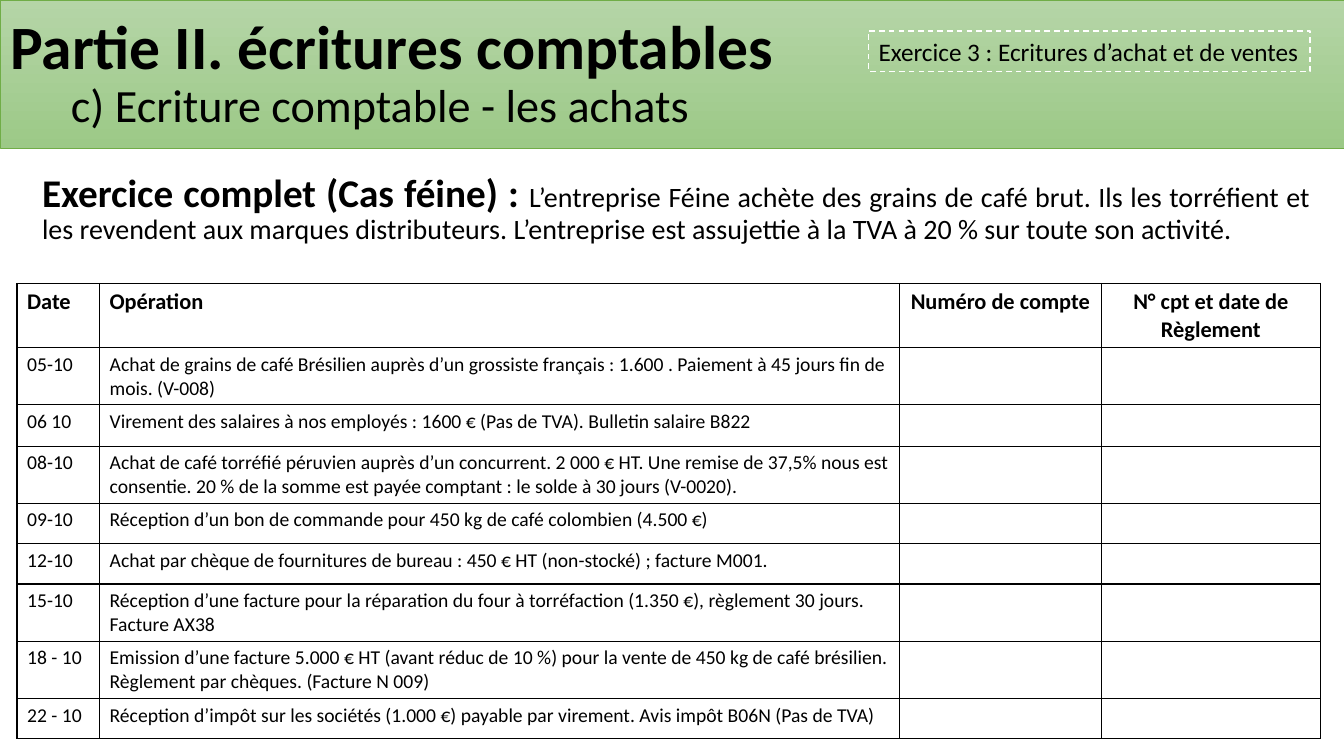
from lxml.etree import SubElement
from pptx import Presentation
from pptx.dml.color import RGBColor
from pptx.enum.dml import MSO_LINE
from pptx.enum.shapes import MSO_SHAPE
from pptx.enum.text import MSO_ANCHOR, MSO_AUTO_SIZE, PP_ALIGN
from pptx.oxml.ns import qn
from pptx.util import Cm, Pt

COLOURS = {
    "text": "000000",
    "border": "000000",
    "dashes": "FFFFFF",
    "banner_top": "B5D5A7",
    "banner_bottom": "9CC987",
    "banner_line": "70AD47",
}
FONT = "Calibri"

HEADING = "Partie II. écritures comptables"
SUBHEADING = "\t c) Ecriture comptable - les achats"
EXERCISE = "Exercice 3 : Ecritures d’achat et de ventes"
CASE_LABEL = "Exercice complet (Cas féine) : "
CASE_TEXT = (
    "L’entreprise Féine achète des grains de café brut. Ils les torréfient et "
    "les revendent aux marques distributeurs. L’entreprise est assujettie à la "
    "TVA à 20 % sur toute son activité."
)

COLUMNS = [
    ("Date", 2.08, PP_ALIGN.LEFT),
    ("Opération", 20.16, PP_ALIGN.LEFT),
    ("Numéro de compte", 5.08, PP_ALIGN.CENTER),
    ("N° cpt et date de Règlement", 5.53, PP_ALIGN.CENTER),
]
HEADER_HEIGHT, ONE_LINE, ONE_LINE_TALL, TWO_LINES = 1.62, 0.85, 1.04, 1.44
OPERATIONS = [
    ("05-10", "Achat de grains de café Brésilien auprès d’un grossiste français : 1.600 . "
     "Paiement à 45 jours fin de mois. (V-008)", TWO_LINES),
    ("06 10", "Virement des salaires à nos employés : 1600 € (Pas de TVA). "
     "Bulletin salaire B822", ONE_LINE_TALL),
    ("08-10", "Achat de café torréfié péruvien auprès d’un concurrent. 2 000 € HT. "
     "Une remise de 37,5% nous est consentie. 20 % de la somme est payée comptant : "
     "le solde à 30 jours (V-0020).", TWO_LINES),
    ("09-10", "Réception d’un bon de commande pour 450 kg de café colombien (4.500 €)", ONE_LINE),
    ("12-10", "Achat par chèque de fournitures de bureau : 450 € HT (non-stocké) ; "
     "facture M001.", ONE_LINE),
    ("15-10", "Réception d’une facture pour la réparation du four à torréfaction (1.350 €), "
     "règlement 30 jours. Facture AX38", TWO_LINES),
    ("18 - 10", "Emission d’une facture 5.000 € HT (avant réduc de 10 %) pour la vente de "
     "450 kg de café brésilien. Règlement par chèques. (Facture N 009)", TWO_LINES),
    ("22 - 10", "Réception d’impôt sur les sociétés (1.000 €) payable par virement. "
     "Avis impôt B06N (Pas de TVA)", ONE_LINE),
]


def colour(key):
    return RGBColor.from_string(COLOURS[key])


def write(paragraph, text, size, bold=False, align=PP_ALIGN.LEFT, spacing=None):
    paragraph.alignment = align
    paragraph.line_spacing = spacing
    run = paragraph.add_run()
    run.text = text
    run.font.name = FONT
    run.font.size = Pt(size)
    run.font.bold = bold
    run.font.color.rgb = colour("text")


def add_borders(cell):
    properties = cell._tc.get_or_add_tcPr()
    for position, side in enumerate(("lnL", "lnR", "lnT", "lnB")):
        line = SubElement(properties, qn(f"a:{side}"), w=str(Pt(1)))
        fill = SubElement(line, qn("a:solidFill"))
        SubElement(fill, qn("a:srgbClr"), val=COLOURS["border"])
        properties.insert(position, line)


def add_banner(slide):
    banner = slide.shapes.title
    banner.left, banner.top, banner.width, banner.height = Cm(0), Cm(0), Cm(33.87), Cm(3.73)
    banner.fill.gradient()
    banner.fill.gradient_angle = 270
    for stop, key in zip(banner.fill.gradient_stops, ("banner_top", "banner_bottom")):
        stop.color.rgb = colour(key)
    banner.line.color.rgb = colour("banner_line")
    banner.line.width = Pt(0.5)
    frame = banner.text_frame
    frame.auto_size = MSO_AUTO_SIZE.NONE
    frame.vertical_anchor = MSO_ANCHOR.MIDDLE
    heading = frame.paragraphs[0]
    write(heading, HEADING, 44, bold=True, spacing=0.9)
    heading.add_line_break()
    write(heading, SUBHEADING, 33, spacing=0.9)


def add_exercise(slide):
    exercise = slide.shapes.add_shape(MSO_SHAPE.RECTANGLE, Cm(21.89), Cm(0.78), Cm(11.13), Cm(1.03))
    exercise.shadow.inherit = False
    exercise.fill.background()
    exercise.line.color.rgb = colour("dashes")
    exercise.line.width = Pt(1)
    exercise.line.dash_style = MSO_LINE.DASH
    exercise.text_frame.word_wrap = False
    exercise.text_frame.auto_size = MSO_AUTO_SIZE.SHAPE_TO_FIT_TEXT
    write(exercise.text_frame.paragraphs[0], EXERCISE, 18)


def add_case(slide):
    case = slide.shapes.add_textbox(Cm(0.81), Cm(4.24), Cm(32.46), Cm(13.94))
    case.text_frame.word_wrap = True
    paragraph = case.text_frame.paragraphs[0]
    write(paragraph, CASE_LABEL, 28, bold=True, align=PP_ALIGN.JUSTIFY, spacing=0.9)
    write(paragraph, CASE_TEXT, 20, align=PP_ALIGN.JUSTIFY, spacing=0.9)


def add_journal(slide):
    heights = [HEADER_HEIGHT] + [height for *_, height in OPERATIONS]
    widths = [width for _, width, _ in COLUMNS]
    journal = slide.shapes.add_table(
        len(heights), len(widths), Cm(0.43), Cm(7.14), Cm(sum(widths)), Cm(sum(heights))
    ).table
    journal.first_row = journal.horz_banding = False
    for row, height in zip(journal.rows, heights):
        row.height = Cm(height)
    for column, width in zip(journal.columns, widths):
        column.width = Cm(width)
    for cell in journal.iter_cells():
        cell.fill.background()
        add_borders(cell)
    for index, (label, _, align) in enumerate(COLUMNS):
        write(journal.cell(0, index).text_frame.paragraphs[0], label, 16, bold=True, align=align)
    for index, (date, operation, _) in enumerate(OPERATIONS, start=1):
        write(journal.cell(index, 0).text_frame.paragraphs[0], date, 14)
        write(journal.cell(index, 1).text_frame.paragraphs[0], operation, 14)


def main():
    deck = Presentation()
    deck.slide_width, deck.slide_height = Cm(33.87), Cm(19.05)
    slide = deck.slides.add_slide(deck.slide_layouts[5])
    add_banner(slide)
    add_exercise(slide)
    add_case(slide)
    add_journal(slide)
    deck.save("out.pptx")


if __name__ == "__main__":
    main()
